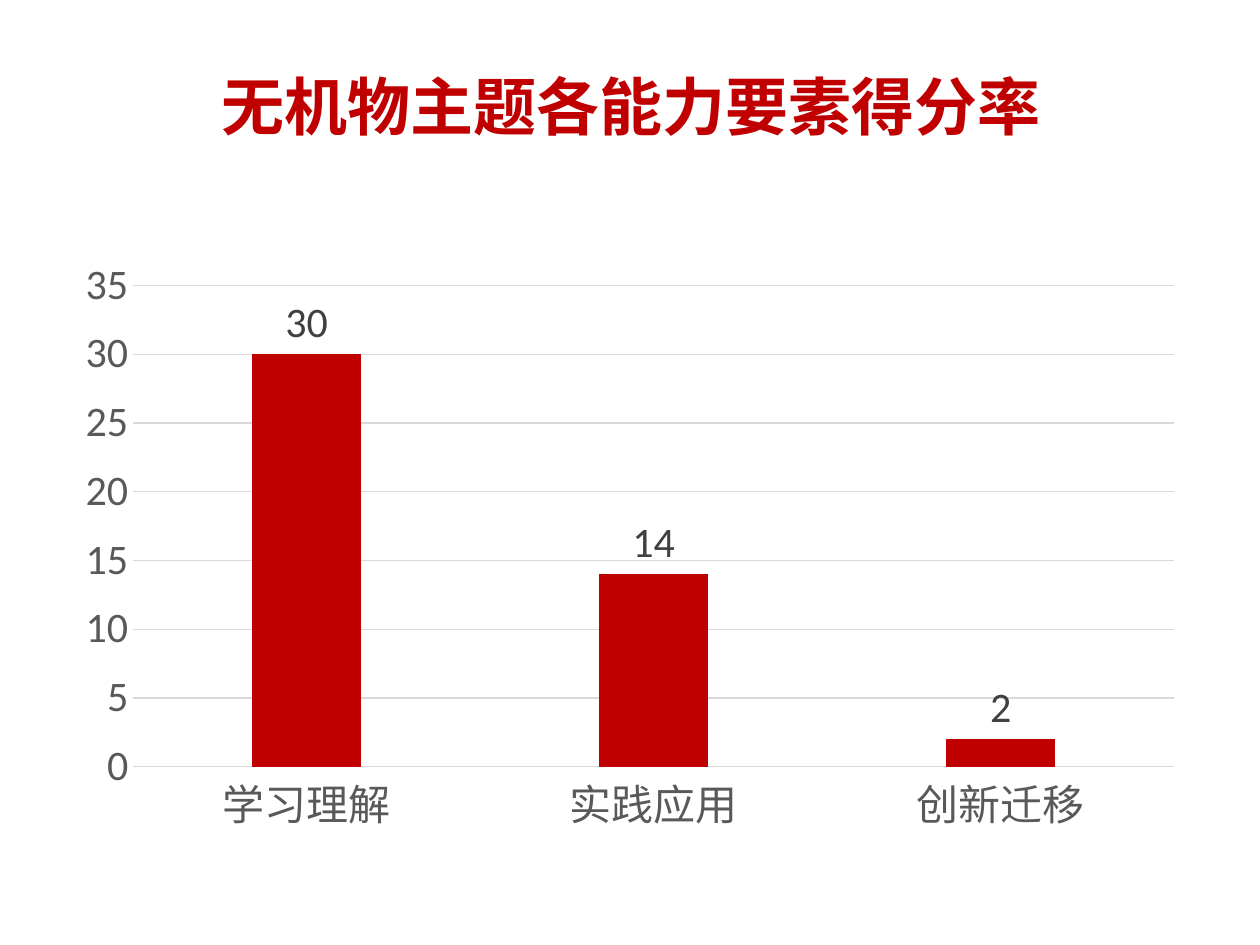
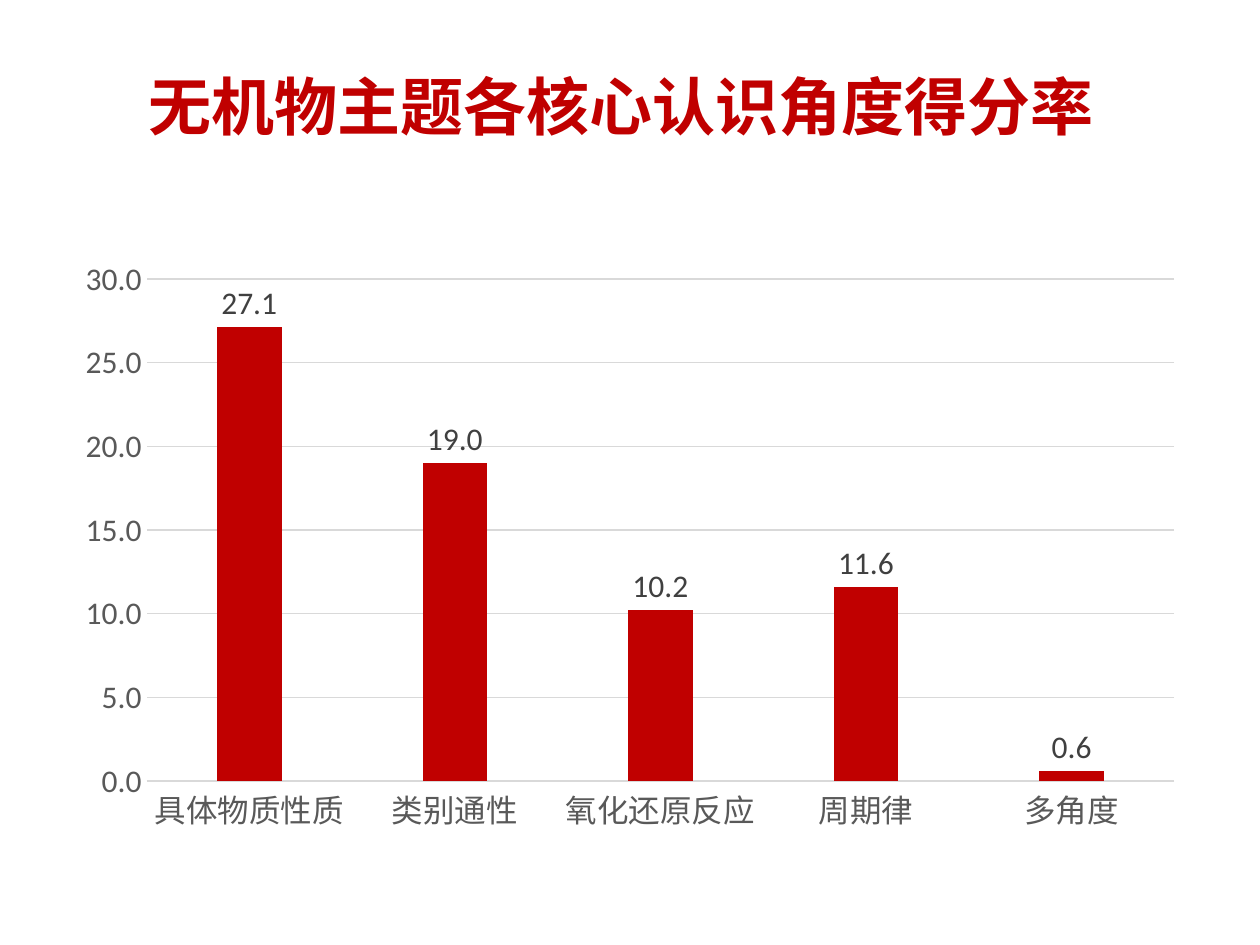
from pptx import Presentation
from pptx.chart.data import CategoryChartData
from pptx.dml.color import RGBColor
from pptx.enum.chart import XL_CHART_TYPE, XL_LABEL_POSITION, XL_TICK_MARK
from pptx.enum.text import MSO_ANCHOR, PP_ALIGN
from pptx.util import Emu, Pt

EMU_PER_PX = 914400 / 126
TITLE_ONLY = 5


def px(length):
    return Emu(round(length * EMU_PER_PX))


def color(hex_string):
    return RGBColor.from_string(hex_string)


class Deck:
    FONT = "Calibri"
    RED, GRID, AXIS_TEXT, LABEL_TEXT = "C00000", "D9D9D9", "595959", "404040"

    def __init__(self):
        self.presentation = Presentation()
        self.presentation.slide_width = px(1260)
        self.presentation.slide_height = px(945)
        self.slide = None

    def add_slide(self):
        layout = self.presentation.slide_layouts[TITLE_ONLY]
        self.slide = self.presentation.slides.add_slide(layout)

    def style_font(self, font, size, hex_string, bold=False):
        font.name, font.size, font.bold = self.FONT, Pt(size), bold
        font.color.rgb = color(hex_string)

    def style_line(self, line):
        line.color.rgb = color(self.GRID)
        line.width = Pt(0.75)

    def title(self, text, left):
        shape = self.slide.shapes.title
        shape.left, shape.top, shape.width, shape.height = map(px, (left, 26, 1134, 158))
        shape.text_frame.text = text
        shape.text_frame.vertical_anchor = MSO_ANCHOR.MIDDLE
        paragraph = shape.text_frame.paragraphs[0]
        paragraph.alignment = PP_ALIGN.CENTER
        self.style_font(paragraph.font, 36, self.RED, bold=True)

    def column_chart(self, scores, size, number_format, maximum):
        data = CategoryChartData(number_format=number_format)
        data.categories = scores.keys()
        data.add_series("得分率", scores.values())
        chart = self.slide.shapes.add_chart(
            XL_CHART_TYPE.COLUMN_CLUSTERED, px(63), px(248), px(1134), px(596), data).chart
        chart.has_title = chart.has_legend = False
        self.style_font(chart.font, size, "000000")

        # Axes and gridlines
        for axis in (chart.category_axis, chart.value_axis):
            axis.major_tick_mark = axis.minor_tick_mark = XL_TICK_MARK.NONE
            self.style_font(axis.tick_labels.font, size, self.AXIS_TEXT)
        self.style_line(chart.category_axis.format.line)
        value_axis = chart.value_axis
        value_axis.minimum_scale, value_axis.maximum_scale = 0, maximum
        value_axis.major_unit = 5
        value_axis.format.line.fill.background()
        value_axis.has_major_gridlines = True
        self.style_line(value_axis.major_gridlines.format.line)
        value_axis.tick_labels.number_format = number_format
        value_axis.tick_labels.number_format_is_linked = False

        # Columns and their labels
        plot = chart.plots[0]
        plot.gap_width, plot.overlap = 219, -27
        plot.vary_by_categories = False
        series = plot.series[0]
        series.format.fill.solid()
        series.format.fill.fore_color.rgb = color(self.RED)
        labels = series.data_labels
        labels.show_value = True
        labels.position = XL_LABEL_POSITION.OUTSIDE_END
        labels.number_format = number_format
        labels.number_format_is_linked = False
        self.style_font(labels.font, size, self.LABEL_TEXT)


def main():
    deck = Deck()

    # Scores by ability
    deck.add_slide()
    deck.title("无机物主题各能力要素得分率", left=64)
    abilities = {"学习理解": 30, "实践应用": 14, "创新迁移": 2}
    deck.column_chart(abilities, size=24, number_format="0", maximum=35)

    # Scores by core perspective
    deck.add_slide()
    deck.title("无机物主题各核心认识角度得分率", left=54)
    perspectives = {"具体物质性质": 27.1, "类别通性": 19, "氧化还原反应": 10.2,
                    "周期律": 11.6, "多角度": 0.6}
    deck.column_chart(perspectives, size=18, number_format="0.0", maximum=30)

    deck.presentation.save("out.pptx")


if __name__ == "__main__":
    main()
